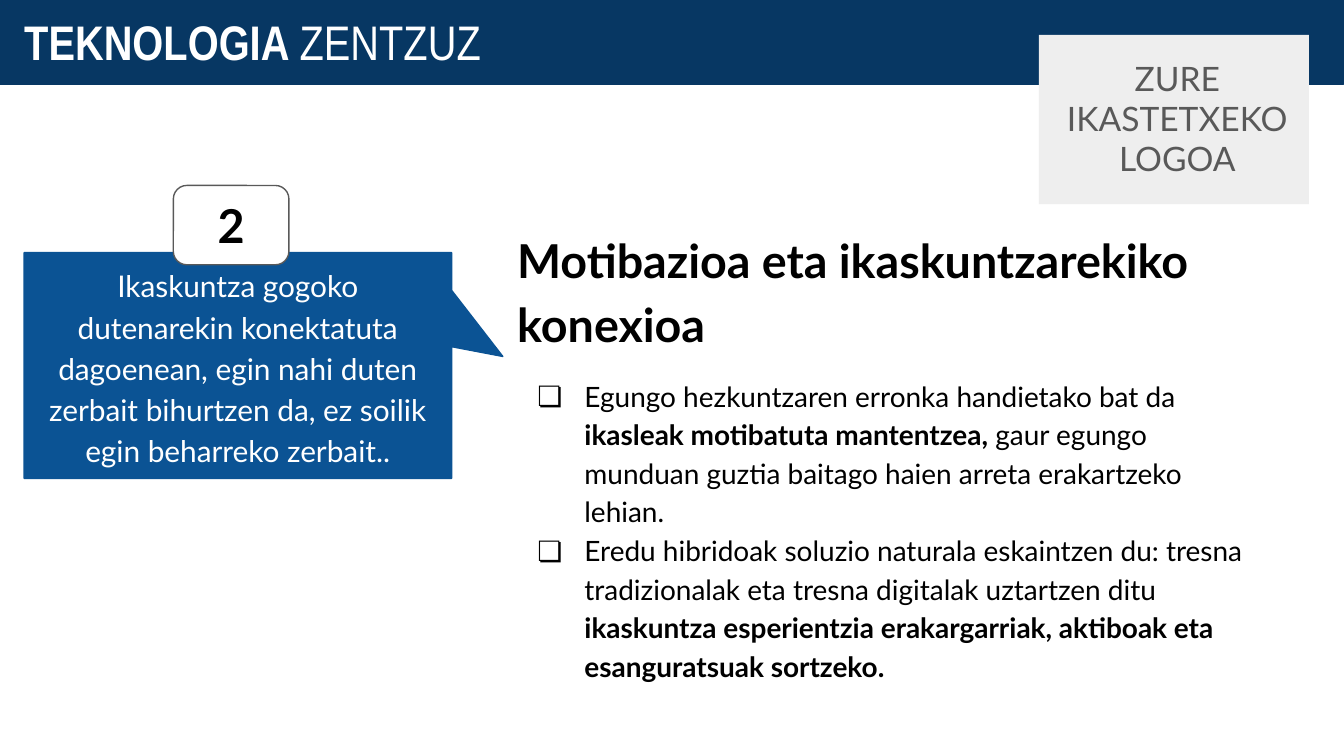
from dataclasses import dataclass

from lxml import etree
from pptx import Presentation
from pptx import util as u
from pptx.dml.color import RGBColor
from pptx.enum import shapes, text
from pptx.oxml import ns

Kind = shapes.MSO_SHAPE
Align = text.PP_ALIGN
Anchor = text.MSO_ANCHOR


@dataclass
class Run:
    text: str
    size: float
    color: str = "000000"
    bold: bool = False
    font: str = "Lato"


@dataclass
class Para:
    runs: list[Run]
    align: Align = Align.LEFT
    lead: float = 1.0
    before: float = 0
    bullet: str = ""


@dataclass
class Box:
    place: tuple[float, float, float, float]
    paras: list[Para]
    kind: Kind | None = None
    fill: str = ""
    line: str = ""
    width: float = 0.75
    anchor: Anchor = Anchor.MIDDLE
    adjust: tuple[float, ...] = ()
    grow: bool = False


def paint(target, color: str) -> None:
    target.rgb = RGBColor.from_string(color)


def mark(para, sign: str) -> None:
    props = para._p.get_or_add_pPr()
    props.set("marL", str(u.Inches(0.5)))
    props.set("indent", str(u.Inches(-0.35)))
    tint = etree.SubElement(props, ns.qn("a:buClr"))
    etree.SubElement(tint, ns.qn("a:srgbClr"), val="000000")
    etree.SubElement(props, ns.qn("a:buSzPts"), val="1500")
    etree.SubElement(props, ns.qn("a:buFont"), typeface="Lato")
    etree.SubElement(props, ns.qn("a:buChar"), char=sign)


def write(frame, paras: list[Para]) -> None:
    for i, item in enumerate(paras):
        para = frame.add_paragraph() if i else frame.paragraphs[0]
        para.alignment = item.align
        para.line_spacing = item.lead
        para.space_before = u.Pt(item.before)
        if item.bullet:
            mark(para, item.bullet)
        for part in item.runs:
            run = para.add_run()
            run.text = part.text
            run.font.name = part.font
            run.font.size = u.Pt(part.size)
            run.font.bold = part.bold
            paint(run.font.color, part.color)


def draw(slide, box: Box) -> None:
    place = [u.Inches(n) for n in box.place]
    if box.kind is None:
        shape = slide.shapes.add_textbox(*place)
    else:
        shape = slide.shapes.add_shape(box.kind, *place)
        shape.shadow.inherit = False
        shape.fill.solid()
        paint(shape.fill.fore_color, box.fill)
        if box.line:
            paint(shape.line.color, box.line)
            shape.line.width = u.Pt(box.width)
        else:
            shape.line.fill.background()
    for i, value in enumerate(box.adjust):
        shape.adjustments[i] = value
    frame = shape.text_frame
    frame.word_wrap = True
    frame.vertical_anchor = box.anchor
    if box.grow:
        frame.auto_size = text.MSO_AUTO_SIZE.SHAPE_TO_FIT_TEXT
    for side in ("left", "top", "right", "bottom"):
        setattr(frame, f"margin_{side}", u.Inches(0.1))
    write(frame, box.paras)


HEAD = Para([Run("Motibazioa eta ikaskuntzarekiko konexioa", 25, bold=True)],
            lead=1.15, before=14)
FIRST = Para([
    Run("Egungo hezkuntzaren erronka handietako bat da ", 15),
    Run("ikasleak motibatuta mantentzea, ", 15, bold=True),
    Run("gaur egungo munduan guztia baitago haien arreta erakartzeko lehian.", 15),
], lead=1.15, before=12, bullet="❏")
NEXT = Para([
    Run("Eredu hibridoak soluzio naturala eskaintzen du: tresna tradizionalak "
        "eta tresna digitalak uztartzen ditu ", 15),
    Run("ikaskuntza esperientzia erakargarriak, aktiboak eta esanguratsuak "
        "sortzeko.", 15, bold=True),
], lead=1.15, bullet="❏")
QUOTE = Para([Run("Ikaskuntza gogoko dutenarekin konektatuta dagoenean, egin nahi "
                  "duten zerbait bihurtzen da, ez soilik egin beharreko zerbait..",
                  16, "FFFFFF")], Align.CENTER, 1.15, 8)
COUNT = Para([Run("2", 25, bold=True)], Align.CENTER)
TITLE = Para([Run(" TEKNOLOGIA ", 26, "FFFFFF", True, "Arial Narrow"),
              Run("ZENTZUZ", 26, "FFFFFF", False, "Arial Narrow")])
LOGO = Para([Run("ZURE IKASTETXEKO LOGOA", 18, "595959")], Align.CENTER)

BOXES = [
    Box((3.75, 1.56, 5.78, 3.57), [HEAD, FIRST, NEXT], anchor=Anchor.TOP, grow=True),
    Box((0.18, 1.88, 3.18, 1.68), [QUOTE], Kind.ROUNDED_RECTANGULAR_CALLOUT,
        "0B5394", "0B5394", adjust=(0.62, -0.04, 0)),
    Box((1.29, 1.38, 0.86, 0.59), [COUNT], Kind.ROUNDED_RECTANGLE,
        "FFFFFF", "595959", adjust=(0.17,)),
    Box((0, 0, 10, 0.62), [TITLE], Kind.RECTANGLE, "073763", "073763", 1.5,
        Anchor.BOTTOM),
    Box((7.73, 0.26, 2.01, 1.26), [], Kind.RECTANGLE, "EEEEEE"),
    Box((7.78, 0.33, 1.96, 0.8), [LOGO], anchor=Anchor.TOP),
]


def main() -> None:
    deck = Presentation()
    deck.slide_width = u.Inches(10)
    deck.slide_height = u.Inches(10 * 9 / 16)
    slide = deck.slides.add_slide(deck.slide_layouts[6])
    for box in BOXES:
        draw(slide, box)
    deck.save("out.pptx")


if __name__ == "__main__":
    main()
